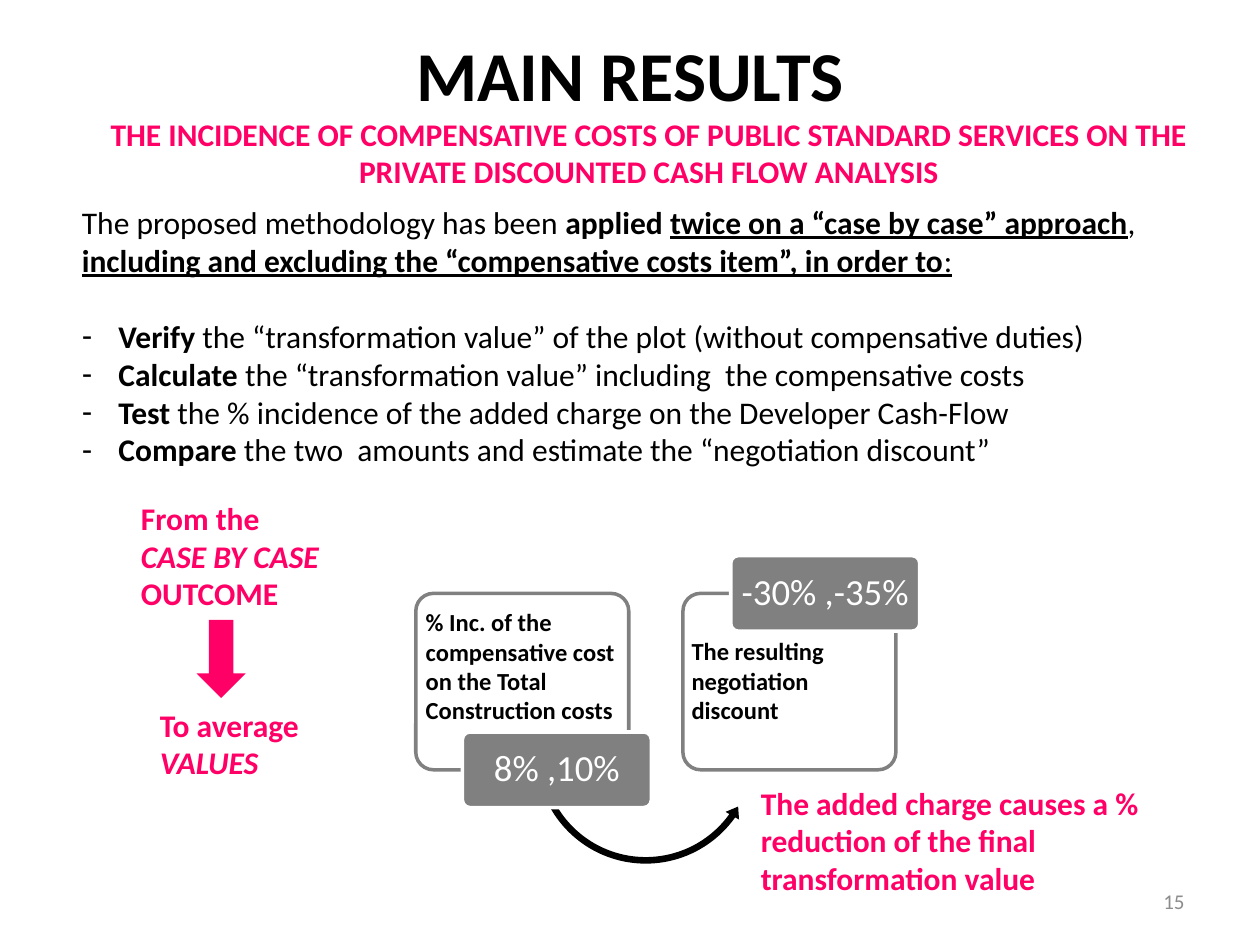
from lxml import etree
from pptx import Presentation
from pptx.dml.color import RGBColor
from pptx.enum.shapes import MSO_SHAPE
from pptx.enum.text import MSO_ANCHOR, MSO_AUTO_SIZE, PP_ALIGN
from pptx.oxml.ns import qn
from pptx.util import Inches, Pt

ROUND = MSO_SHAPE.ROUNDED_RECTANGLE
DOWN = MSO_SHAPE.DOWN_ARROW
CURVE = MSO_SHAPE.LEFT_CIRCULAR_ARROW
TOP, MIDDLE = MSO_ANCHOR.TOP, MSO_ANCHOR.MIDDLE
LEFT, CENTER, RIGHT = PP_ALIGN.LEFT, PP_ALIGN.CENTER, PP_ALIGN.RIGHT
FIXED = MSO_AUTO_SIZE.NONE

FONT = "Calibri"
PINK, GRAY, BLACK, WHITE = "FF0066", "808080", "000000", "FFFFFF"
PALE = "8C8C8C"
INSET = (0.1, 0.05)

BOLD = {"bold": True}
SLANT = {"bold": True, "italic": True}
UNDER = {"bold": True, "underline": True}
LINE = {"underline": True}

INTRO = [
    ("The proposed methodology has been ", {}),
    ("applied ", BOLD),
    ("twice on a “case by case” approach", UNDER),
    (", ", {}),
    ("including and excluding the “compensative costs item”, in order to", UNDER),
    (":", LINE),
]
GOALS = [
    ("Verify", " the “transformation value” of the plot (without compensative duties)"),
    ("Calculate", " the “transformation value” including  the compensative costs"),
    ("Test", " the % incidence of the added charge on the Developer Cash-Flow"),
    ("Compare", " the two  amounts and estimate the “negotiation discount”"),
]


def paint(color, code):
    color.rgb = RGBColor.from_string(code)


def apply(item, values):
    for name, value in values.items():
        setattr(item, name, value)


def place(shape, box):
    names = ("left", "top", "width", "height")
    apply(shape, {name: Inches(size) for name, size in zip(names, box)})


def write(shape, paras, size, code, align=LEFT, anchor=TOP, inset=INSET, gap=1):
    """Fill a shape with paragraphs, each a list of (text, format) runs."""
    frame = shape.text_frame
    side, edge = (Inches(value) for value in inset)
    apply(frame, {
        "word_wrap": True, "auto_size": FIXED, "vertical_anchor": anchor,
        "margin_left": side, "margin_right": side,
        "margin_top": edge, "margin_bottom": edge,
    })
    for count, runs in enumerate(paras):
        para = frame.add_paragraph() if count else frame.paragraphs[0]
        apply(para, {"alignment": align, "line_spacing": gap,
                     "space_before": Pt(0)})
        for text, style in runs:
            run = para.add_run()
            run.text = text
            apply(run.font, {"name": FONT, "size": Pt(size), "bold": False, **style})
            paint(run.font.color, code)
    return frame


def add_text(slide, box, paras, size, code, **rest):
    shape = slide.shapes.add_textbox(*map(Inches, box))
    write(shape, paras, size, code, **rest)


def add_block(slide, kind, box, fill, line=None, adjust=()):
    shape = slide.shapes.add_shape(kind, *map(Inches, box))
    shape.shadow.inherit = False
    for spot, value in enumerate(adjust):
        shape.adjustments[spot] = value
    shape.fill.solid()
    paint(shape.fill.fore_color, fill)
    if line:
        paint(shape.line.color, line)
        shape.line.width = Pt(2)
    else:
        shape.line.fill.background()
    return shape


def set_dash(para, indent):
    """Give a paragraph a dash bullet with a hanging indent."""
    props = para._p.get_or_add_pPr()
    props.set("marL", str(Inches(indent)))
    props.set("indent", str(-Inches(indent)))
    if indent:
        etree.SubElement(props, qn("a:buChar")).set("char", "-")
    else:
        etree.SubElement(props, qn("a:buNone"))


def add_list(body):
    place(body, (0.55, 1.56, 9.14, 2.22))
    goals = [[(verb, BOLD), (rest, {})] for verb, rest in GOALS]
    paras = write(body, [INTRO] + goals, 18, BLACK).paragraphs
    paras[1].space_before = Pt(22)
    for count, para in enumerate(paras):
        set_dash(para, 0.29 if count else 0)


def add_card(slide, left):
    add_block(slide, ROUND, (left, 4.71, 1.69, 1.4), WHITE, GRAY, (0.1,))


def add_value(slide, left, top, text):
    shape = add_block(slide, ROUND, (left, top, 1.5, 0.6), GRAY, WHITE, (0.1,))
    write(shape, [[(text, {})]], 21, WHITE, align=CENTER, anchor=MIDDLE,
          inset=(0.04, 0.03), gap=0.9)


def main():
    deck = Presentation()
    deck.slide_width, deck.slide_height = Inches(10), Inches(7.5)
    slide = deck.slides.add_slide(deck.slide_layouts[1])

    # Title, body list and heading
    title, body = slide.placeholders
    place(title, (0.5, 0.2, 9, 0.77))
    write(title, [[("MAIN RESULTS", BOLD)]], 40, BLACK, align=CENTER)
    add_list(body)
    head = ("THE INCIDENCE OF COMPENSATIVE COSTS OF PUBLIC STANDARD SERVICES "
            "ON THE PRIVATE DISCOUNTED CASH FLOW ANALYSIS")
    add_text(slide, (0.62, 0.86, 9.06, 0.71), [[(head, BOLD)]], 18, PINK,
             align=CENTER)

    # From single cases to average values
    add_text(slide, (1.02, 3.91, 2.42, 1.01),
             [[("From the", BOLD)], [("CASE BY CASE ", SLANT), ("OUTCOME", BOLD)]],
             18, PINK)
    add_block(slide, DOWN, (1.56, 4.92, 0.39, 0.62), PINK)
    add_text(slide, (1.17, 5.55, 2.42, 0.71),
             [[("To average", BOLD)], [("VALUES", SLANT)]], 18, PINK)

    # Cards, curved arrow and value tags
    add_card(slide, 3.3)
    add_block(slide, CURVE, (4.22, 5.08, 1.81, 1.81), BLACK,
              adjust=(0.029, 3.518, 21.274, 90.245, 0.034))
    add_value(slide, 3.67, 5.81, "8% ,10%")
    add_card(slide, 5.42)
    add_value(slide, 5.8, 4.41, "-30% ,-35%")

    # Card labels and closing remark
    notes = [
        ((3.28, 4.77, 1.72, 1.04), 14, BLACK,
         "% Inc. of the compensative cost on the Total Construction costs"),
        ((5.94, 6.17, 3.36, 1), 18, PINK,
         "The added charge causes a % reduction of the final transformation value"),
        ((5.39, 5, 1.72, 0.81), 14, BLACK, "The resulting negotiation discount"),
    ]
    for box, size, code, text in notes:
        add_text(slide, box, [[(text, BOLD)]], size, code)

    # Page number
    add_text(slide, (7.17, 6.95, 2.33, 0.4), [[("15", {})]], 12, PALE,
             align=RIGHT, anchor=MIDDLE)
    deck.save("out.pptx")


if __name__ == "__main__":
    main()
